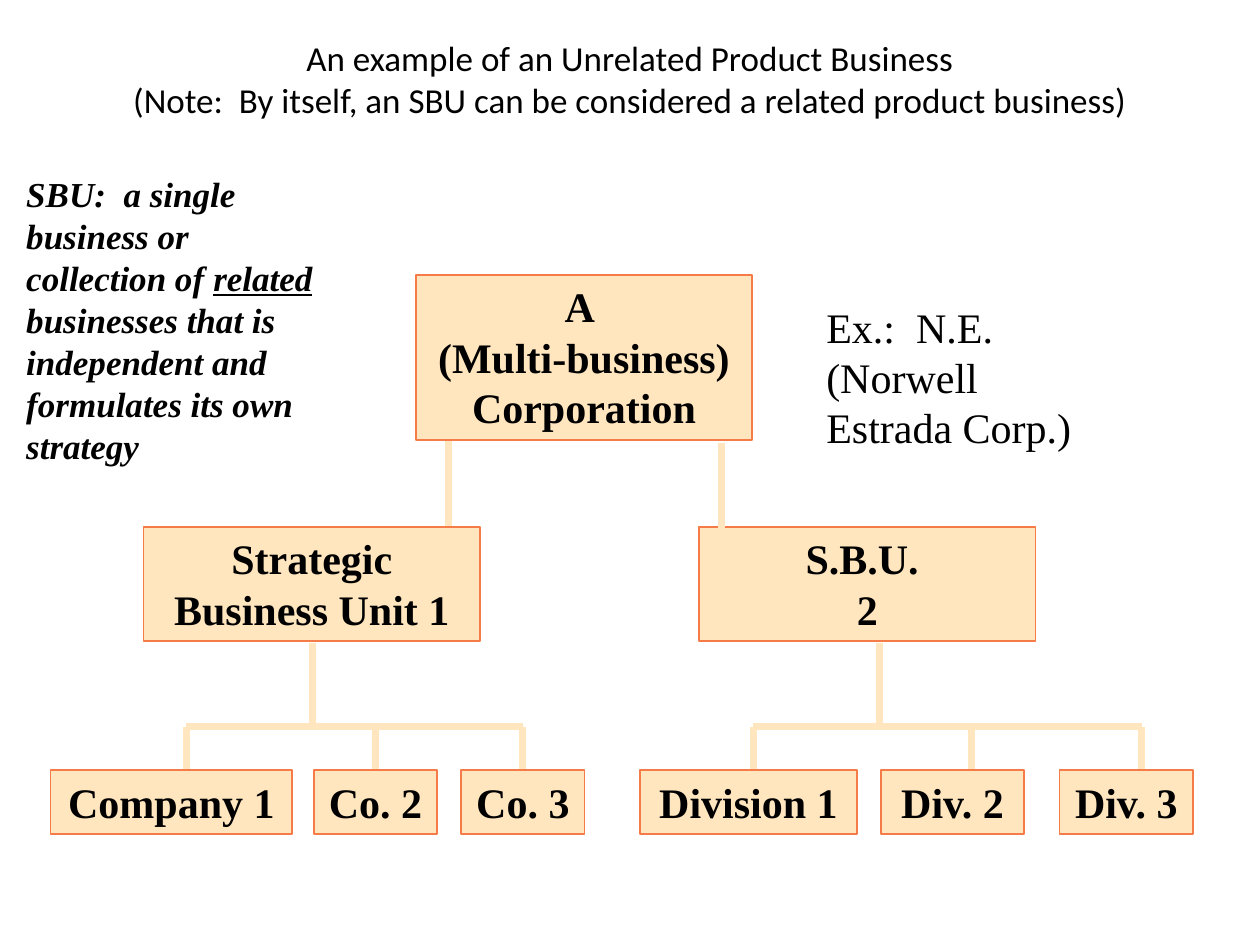
import pptx
import pptx.dml.color
import pptx.enum.shapes
import pptx.enum.text
import pptx.oxml
import pptx.util
from pptx.util import Inches

CREAM = "FFE6BE"
ORANGE = "F57B49"
BLACK = "000000"
SERIF = "Times New Roman"
CENTER = pptx.enum.text.PP_ALIGN.CENTER
LEFT = pptx.enum.text.PP_ALIGN.LEFT


def color(hex_string):
    """Return the RGB colour for a hex string."""
    return pptx.dml.color.RGBColor.from_string(hex_string)


def format_text(text_frame, size, name=SERIF, bold=False, italic=False, alignment=LEFT):
    """Wrap the text and format all its paragraphs alike."""
    text_frame.word_wrap = True
    for paragraph in text_frame.paragraphs:
        paragraph.alignment = alignment
        paragraph.font.size = pptx.util.Pt(size)
        paragraph.font.name = name
        paragraph.font.bold = bold
        paragraph.font.italic = italic
        paragraph.font.color.rgb = color(BLACK)


def add_unit(shapes, text, left, top, width, height):
    """Add one labelled box of the organisation chart."""
    shape = shapes.add_shape(
        pptx.enum.shapes.MSO_SHAPE.RECTANGLE,
        Inches(left), Inches(top), Inches(width), Inches(height),
    )
    shape.shadow.inherit = False
    shape.fill.solid()
    shape.fill.fore_color.rgb = color(CREAM)
    shape.line.color.rgb = color(ORANGE)
    shape.line.width = pptx.util.Pt(1)
    shape.text_frame.text = text
    shape.text_frame.vertical_anchor = pptx.enum.text.MSO_ANCHOR.TOP
    format_text(shape.text_frame, 24, bold=True, alignment=CENTER)


def add_link(shapes, start_x, start_y, end_x, end_y):
    """Add one thick line between units."""
    connector = shapes.add_connector(
        pptx.enum.shapes.MSO_CONNECTOR.STRAIGHT,
        Inches(start_x), Inches(start_y), Inches(end_x), Inches(end_y),
    )
    connector.line.color.rgb = color(CREAM)
    connector.line.width = pptx.util.Pt(4)
    properties = connector._element.spPr
    properties.append(properties.makeelement(pptx.oxml.ns.qn("a:effectLst"), {}))


def add_title(slide, left, top, width, height):
    """Place and fill the title placeholder."""
    title = slide.shapes.title
    title.left, title.top = Inches(left), Inches(top)
    title.width, title.height = Inches(width), Inches(height)
    title.text_frame.text = (
        "An example of an Unrelated Product Business\v"
        "(Note:  By itself, an SBU can be considered a related product business)"
    )
    title.text_frame.vertical_anchor = pptx.enum.text.MSO_ANCHOR.MIDDLE
    format_text(title.text_frame, 20, name="Calibri", alignment=CENTER)


def add_corporation(slide, left, top):
    """Add the corporation, its two business units and their links."""
    shapes = slide.shapes
    add_link(shapes, left + 2.42, top + 1.26, left + 2.42, top + 2.01)
    add_unit(shapes, "A \n(Multi-business) Corporation", left + 2.16, top, 2.67, 1.31)
    add_unit(shapes, "Strategic Business Unit 1", left, top + 2, 2.67, 0.91)
    add_unit(shapes, "S.B.U. \n2", left + 4.41, top + 2, 2.67, 0.91)
    add_link(shapes, left + 4.59, top + 1.34, left + 4.59, top + 2.09)


def add_branch(slide, left, top, stem, units):
    """Add a group of units hanging from a stem; each has text, offset, width and drop."""
    shapes = slide.shapes.add_group_shape().shapes
    bar = top + 0.67
    for text, offset, width, drop in units:
        add_unit(shapes, text, left + offset, top + 1.01, width, 0.51)
        add_link(shapes, left + drop, bar, left + drop, top + 1)
    add_link(shapes, left + stem, top, left + stem, bar)
    add_link(shapes, left + units[0][-1], bar, left + units[-1][-1], bar)


def add_example(slide, left, top, width, height):
    """Add the example of a corporation."""
    box = slide.shapes.add_textbox(Inches(left), Inches(top), Inches(width), Inches(height))
    box.text_frame.text = "Ex.:  N.E.\v(Norwell\nEstrada Corp.)"
    format_text(box.text_frame, 24)


def add_definition(slide, left, top, width, height):
    """Add the definition of a business unit with its key word underlined."""
    box = slide.shapes.add_textbox(Inches(left), Inches(top), Inches(width), Inches(height))
    paragraph = box.text_frame.paragraphs[0]
    paragraph.add_run().text = "SBU:  a single business or collection of "
    key_word = paragraph.add_run()
    key_word.text = "related"
    key_word.font.underline = True
    paragraph.add_run().text = " businesses that is independent and formulates its own strategy"
    format_text(box.text_frame, 20, bold=True, italic=True)


def main():
    """Build and save the slide."""
    presentation = pptx.Presentation()
    presentation.slide_width = Inches(10)
    presentation.slide_height = Inches(7.5)
    slide = presentation.slides.add_slide(presentation.slide_layouts[5])
    add_title(slide, 0.75, 0, 8.5, 1.25)
    add_corporation(slide, 1.14, 2.18)
    add_example(slide, 6.46, 2.34, 2.86, 1.31)
    add_branch(slide, 0.4, 5.1, 2.08, [
        ("Company 1", 0, 1.92, 1.08),
        ("Co. 2", 2.09, 0.98, 2.58),
        ("Co. 3", 3.26, 0.98, 3.75),
    ])
    add_branch(slide, 5.08, 5.1, 1.9, [
        ("Division 1", 0, 1.72, 0.9),
        ("Div. 2", 1.91, 1.14, 2.63),
        ("Div. 3", 3.33, 1.06, 3.98),
    ])
    add_definition(slide, 0.11, 1.32, 2.58, 2.43)
    presentation.save("out.pptx")


if __name__ == "__main__":
    main()
